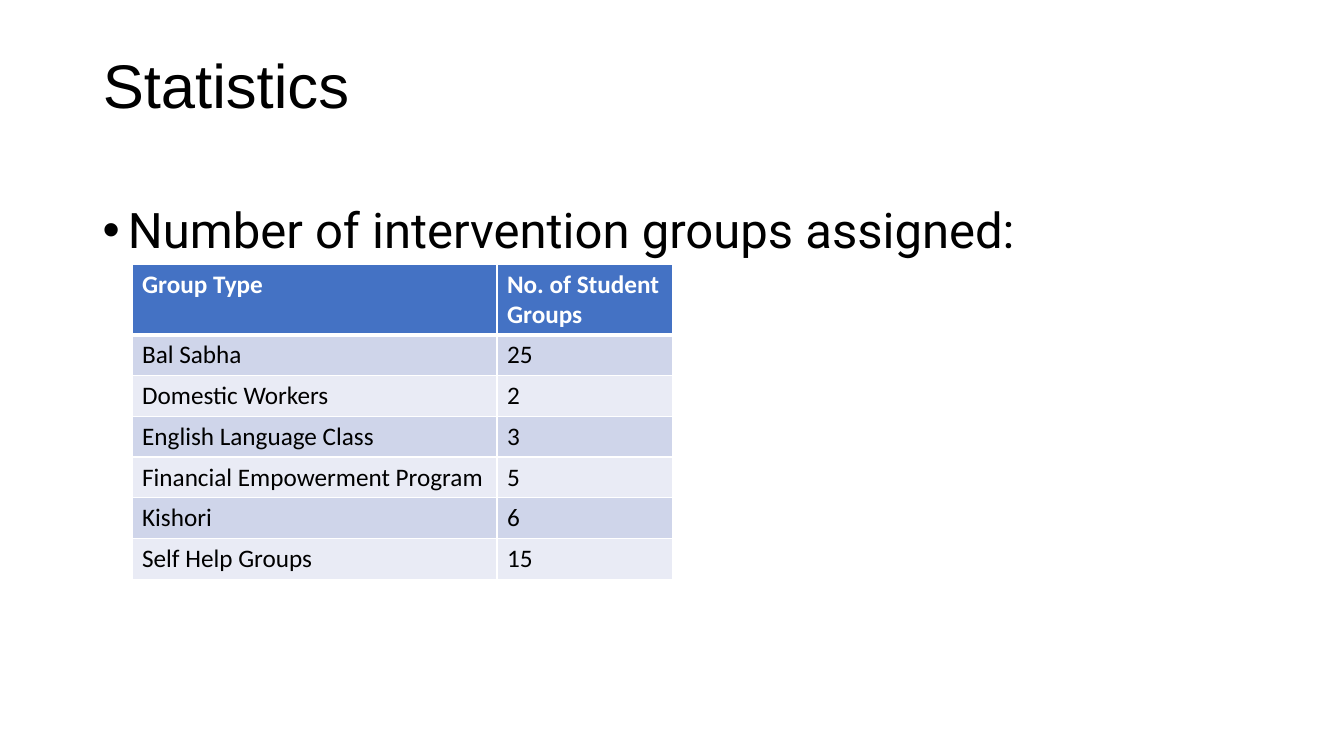
"""Build the statistics slide with its table of intervention groups."""
from typing import NamedTuple

import pptx
import pptx.dml.color
import pptx.enum.text
import pptx.oxml
import pptx.oxml.ns
import pptx.util

Inches = pptx.util.Inches
Pt = pptx.util.Pt


class GroupRow(NamedTuple):
    group_type: str
    count: str


class RowStyle(NamedTuple):
    fill: str
    text: str
    bold: bool
    bottom_border: float


HEADER = GroupRow("Group Type", "No. of Student Groups")
GROUPS = [
    GroupRow("Bal Sabha", "25"),
    GroupRow("Domestic Workers", "2"),
    GroupRow("English Language Class", "3"),
    GroupRow("Financial Empowerment Program", "5"),
    GroupRow("Kishori", "6"),
    GroupRow("Self Help Groups", "15"),
]
HEADER_STYLE = RowStyle("4472C4", "FFFFFF", True, 3)
BAND_STYLES = [
    RowStyle("CFD5EA", "000000", False, 1),
    RowStyle("E9EBF5", "000000", False, 1),
]
COLUMN_WIDTHS = [3.62, 1.74]
HEADER_HEIGHT = 0.7
ROW_HEIGHT = 0.405


def color(value: str) -> pptx.dml.color.RGBColor:
    return pptx.dml.color.RGBColor.from_string(value)


def set_font(paragraph, name: str, size: float, text_color: str, bold: bool = False) -> None:
    font = paragraph.font
    font.name = name
    font.size = Pt(size)
    font.bold = bold
    font.color.rgb = color(text_color)


def add_border(cell, side: str, width: float) -> None:
    border = pptx.oxml.parse_xml(
        f'<a:ln{side} {pptx.oxml.ns.nsdecls("a")} w="{Pt(width)}">'
        '<a:solidFill><a:srgbClr val="FFFFFF"/></a:solidFill>'
        f'</a:ln{side}>'
    )
    cell._tc.get_or_add_tcPr().append(border)


def format_cell(cell, text: str, style: RowStyle, top_border: float) -> None:
    cell.text = text
    set_font(cell.text_frame.paragraphs[0], "Calibri", 18, style.text, style.bold)
    for side, width in (("L", 1), ("R", 1), ("T", top_border), ("B", style.bottom_border)):
        add_border(cell, side, width)
    cell.fill.solid()
    cell.fill.fore_color.rgb = color(style.fill)


def add_title(slide, text: str) -> None:
    title = slide.shapes.title
    title.left, title.top = Inches(0.92), Inches(0.31)
    title.width, title.height = Inches(9.55), Inches(1.13)
    frame = title.text_frame
    frame.text = text
    frame.vertical_anchor = pptx.enum.text.MSO_ANCHOR.MIDDLE
    paragraph = frame.paragraphs[0]
    paragraph.alignment = pptx.enum.text.PP_ALIGN.LEFT
    paragraph.line_spacing = 0.9
    set_font(paragraph, "Arial", 44, "000000")


def add_bullet_text(slide, text: str) -> None:
    box = slide.shapes.add_textbox(Inches(0.92), Inches(2), Inches(11.5), Inches(4.76))
    box.text_frame.word_wrap = True
    paragraph = box.text_frame.paragraphs[0]
    paragraph.text = text
    paragraph.line_spacing = 0.9
    properties = paragraph._p.get_or_add_pPr()
    properties.set("marL", str(Inches(0.25)))
    properties.set("indent", str(Inches(-0.25)))
    namespace = pptx.oxml.ns.nsdecls("a")
    properties.append(pptx.oxml.parse_xml(f'<a:buFont {namespace} typeface="Arial"/>'))
    properties.append(pptx.oxml.parse_xml(f'<a:buChar {namespace} char="•"/>'))
    set_font(paragraph, "Roboto", 35, "000000")


def add_group_table(slide) -> None:
    rows = [HEADER, *GROUPS]
    height = HEADER_HEIGHT + ROW_HEIGHT * len(GROUPS)
    table = slide.shapes.add_table(
        len(rows), len(COLUMN_WIDTHS),
        Inches(1.31), Inches(2.62), Inches(sum(COLUMN_WIDTHS)), Inches(height),
    ).table
    for column, width in zip(table.columns, COLUMN_WIDTHS):
        column.width = Inches(width)
    for index, row in enumerate(rows):
        table.rows[index].height = Inches(ROW_HEIGHT if index else HEADER_HEIGHT)
        style = BAND_STYLES[(index - 1) % 2] if index else HEADER_STYLE
        top_border = HEADER_STYLE.bottom_border if index == 1 else 1
        for column_index, text in enumerate(row):
            format_cell(table.cell(index, column_index), text, style, top_border)


def main() -> None:
    presentation = pptx.Presentation()
    presentation.slide_width = Inches(13.33)
    presentation.slide_height = Inches(7.5)
    slide = presentation.slides.add_slide(presentation.slide_layouts[5])
    add_title(slide, "Statistics")
    add_bullet_text(slide, "Number of intervention groups assigned:")
    add_group_table(slide)
    presentation.save("out.pptx")


if __name__ == "__main__":
    main()
